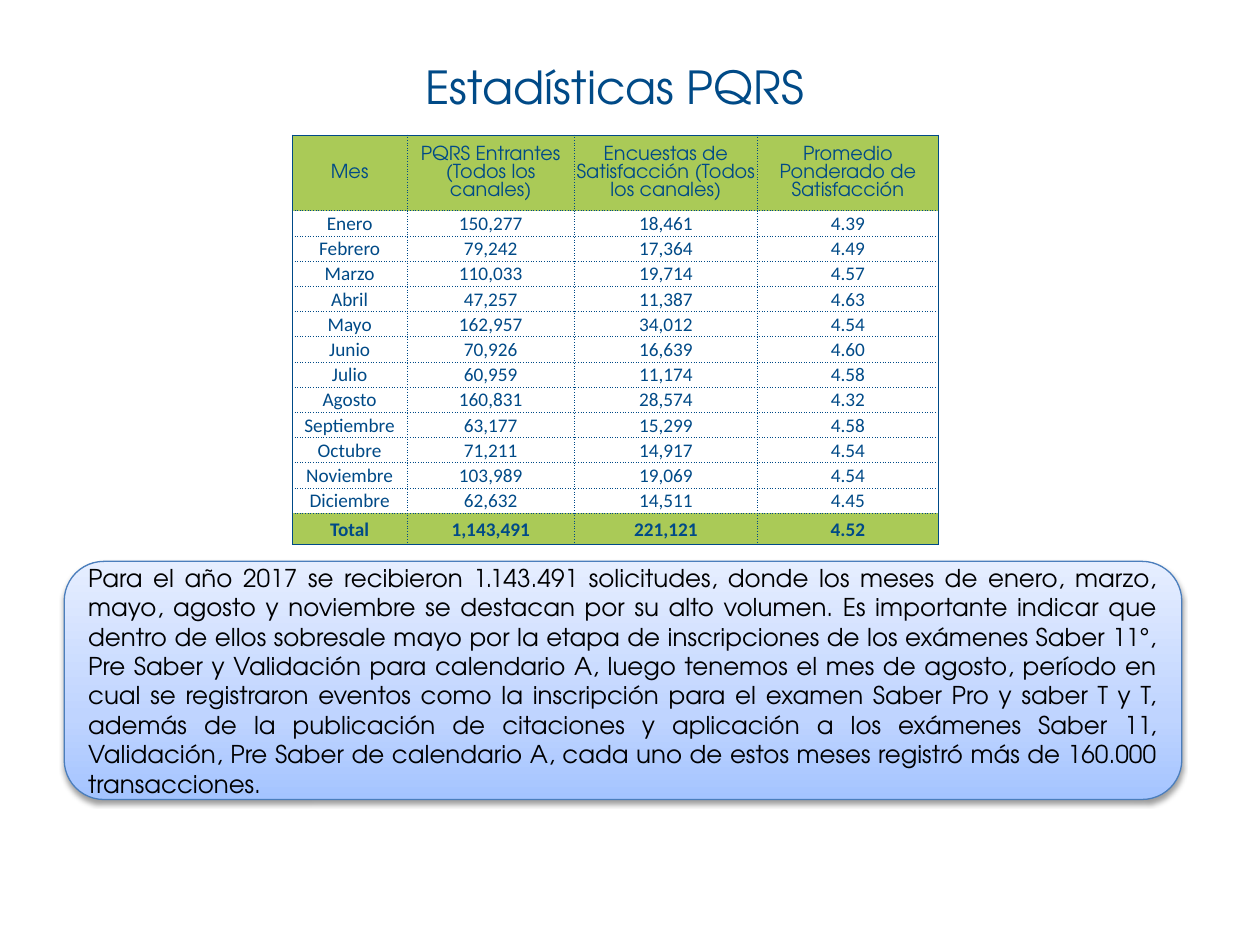
from dataclasses import dataclass

from lxml import etree
from pptx import Presentation, util as u
from pptx.dml.color import RGBColor
from pptx.enum import shapes, text
from pptx.oxml import parse_xml
from pptx.oxml.ns import nsdecls, qn


@dataclass(frozen=True)
class Theme:
    blue: str = "004A87"
    green: str = "AACA57"
    black: str = "000000"
    outline: str = "4B7EBC"
    gradient: tuple = ((0, "A4C4FF"), (35, "BFD4FF"), (100, "E6EEFF"))
    display: str = "TeX Gyre Adventor"
    body: str = "Calibri"
    title_size: int = 26
    note_size: int = 14
    table_size: int = 11
    border: float = 0.5


T = Theme()
W, H = 10, 7.5
COLS = [0.91, 1.33, 1.45, 1.44]
ROWS = [0.6] + [0.2] * 12 + [0.25]
DATA = [
    ("Mes", "PQRS Entrantes (Todos los canales)",
     "Encuestas de Satisfacción (Todos los canales)",
     "Promedio Ponderado de Satisfacción"),
    ("Enero", "150,277", "18,461", "4.39"),
    ("Febrero", "79,242", "17,364", "4.49"),
    ("Marzo", "110,033", "19,714", "4.57"),
    ("Abril", "47,257", "11,387", "4.63"),
    ("Mayo", "162,957", "34,012", "4.54"),
    ("Junio", "70,926", "16,639", "4.60"),
    ("Julio", "60,959", "11,174", "4.58"),
    ("Agosto", "160,831", "28,574", "4.32"),
    ("Septiembre", "63,177", "15,299", "4.58"),
    ("Octubre", "71,211", "14,917", "4.54"),
    ("Noviembre", "103,989", "19,069", "4.54"),
    ("Diciembre", "62,632", "14,511", "4.45"),
    ("Total", "1,143,491", "221,121", "4.52"),
]
NOTE = (
    "Para el año 2017 se recibieron 1.143.491 solicitudes, donde los meses de "
    "enero, marzo, mayo, agosto y noviembre se destacan por su alto volumen. "
    "Es importante indicar que dentro de ellos sobresale mayo por la etapa de "
    "inscripciones de los exámenes Saber 11°, Pre Saber y Validación para "
    "calendario A, luego tenemos el mes de agosto, período en cual se "
    "registraron eventos como la inscripción para el examen Saber Pro y saber "
    "T y T, además de la publicación de citaciones y aplicación a los exámenes "
    "Saber 11, Validación, Pre Saber de calendario A, cada uno de estos meses "
    "registró más de 160.000 transacciones."
)


def box(x, y, w, h):
    return [u.Inches(v) for v in (x * W, y * H, w * W, h * H)]


def write(tf, words, font, size, color, align=text.PP_ALIGN.CENTER, bold=False):
    tf.word_wrap = True
    tf.vertical_anchor = text.MSO_ANCHOR.MIDDLE
    p = tf.paragraphs[0]
    p.alignment = align
    r = p.add_run()
    r.text = words
    r.font.name = font
    r.font.size = u.Pt(size)
    r.font.bold = bold
    r.font.color.rgb = RGBColor.from_string(color)


def add_title(s, words, at):
    sp = s.shapes.add_textbox(*box(*at))
    write(sp.text_frame, words, T.display, T.title_size, T.blue)


def add_note(s, words, at):
    sp = s.shapes.add_shape(shapes.MSO_SHAPE.ROUNDED_RECTANGLE, *box(*at))
    sp.line.color.rgb = RGBColor.from_string(T.outline)
    sp.line.width = u.Pt(0.75)
    stops = "".join(
        f'<a:gs pos="{pos * 1000}"><a:srgbClr val="{color}"/></a:gs>'
        for pos, color in T.gradient)
    fill = parse_xml(
        f'<a:gradFill {nsdecls("a")} rotWithShape="1"><a:gsLst>{stops}</a:gsLst>'
        '<a:lin ang="16200000" scaled="0"/></a:gradFill>')
    sppr = sp._element.spPr
    sppr.find(qn("a:prstGeom")).addnext(fill)
    sppr.append(parse_xml(
        f'<a:effectLst {nsdecls("a")}><a:outerShdw blurRad="{u.Pt(3.1)}" '
        f'dist="{u.Pt(1.6)}" dir="5400000" rotWithShape="0">'
        f'<a:srgbClr val="{T.black}"><a:alpha val="38000"/></a:srgbClr>'
        '</a:outerShdw></a:effectLst>'))
    write(sp.text_frame, words, T.display, T.note_size, T.black,
          text.PP_ALIGN.JUSTIFY)


def set_borders(cell, solid):
    tcpr = cell._tc.get_or_add_tcPr()
    for i, side in enumerate("LRTB"):
        ln = etree.Element(qn(f"a:ln{side}"), w=str(u.Pt(T.border)))
        fill = etree.SubElement(ln, qn("a:solidFill"))
        etree.SubElement(fill, qn("a:srgbClr"), val=T.blue)
        dash = "solid" if side in solid else "dot"
        etree.SubElement(ln, qn("a:prstDash"), val=dash)
        tcpr.insert(i, ln)


def fill_cell(cell, words, head, total, solid):
    cell.margin_left = cell.margin_right = cell.margin_top = u.Inches(0.01)
    cell.margin_bottom = 0
    cell.vertical_anchor = text.MSO_ANCHOR.MIDDLE
    if head or total:
        cell.fill.solid()
        cell.fill.fore_color.rgb = RGBColor.from_string(T.green)
    else:
        cell.fill.background()
    write(cell.text_frame, words, T.display if head else T.body,
          T.table_size, T.blue, bold=total)
    set_borders(cell, solid)


def add_stats(s, data, x, y):
    at = box(x, y, sum(COLS) / W, sum(ROWS) / H)
    tbl = s.shapes.add_table(len(ROWS), len(COLS), *at).table
    tbl.first_row = tbl.horz_banding = False
    for col, w in zip(tbl.columns, COLS):
        col.width = u.Inches(w)
    for row, h in zip(tbl.rows, ROWS):
        row.height = u.Inches(h)
    last_row, last_col = len(ROWS) - 1, len(COLS) - 1
    for i, record in enumerate(data):
        for j, words in enumerate(record):
            edges = {"L": j == 0, "R": j == last_col,
                     "T": i == 0, "B": i == last_row}
            solid = [side for side, outer in edges.items() if outer]
            fill_cell(tbl.cell(i, j), words, i == 0, i == last_row, solid)


def main():
    prs = Presentation()
    prs.slide_width, prs.slide_height = u.Inches(W), u.Inches(H)
    s = prs.slides.add_slide(prs.slide_layouts[6])
    add_title(s, "Estadísticas PQRS", (0.038, 0.039, 0.9, 0.105))
    add_note(s, NOTE, (0.051, 0.594, 0.887, 0.252))
    add_stats(s, DATA, 0.232, 0.143)
    prs.save("out.pptx")


if __name__ == "__main__":
    main()
